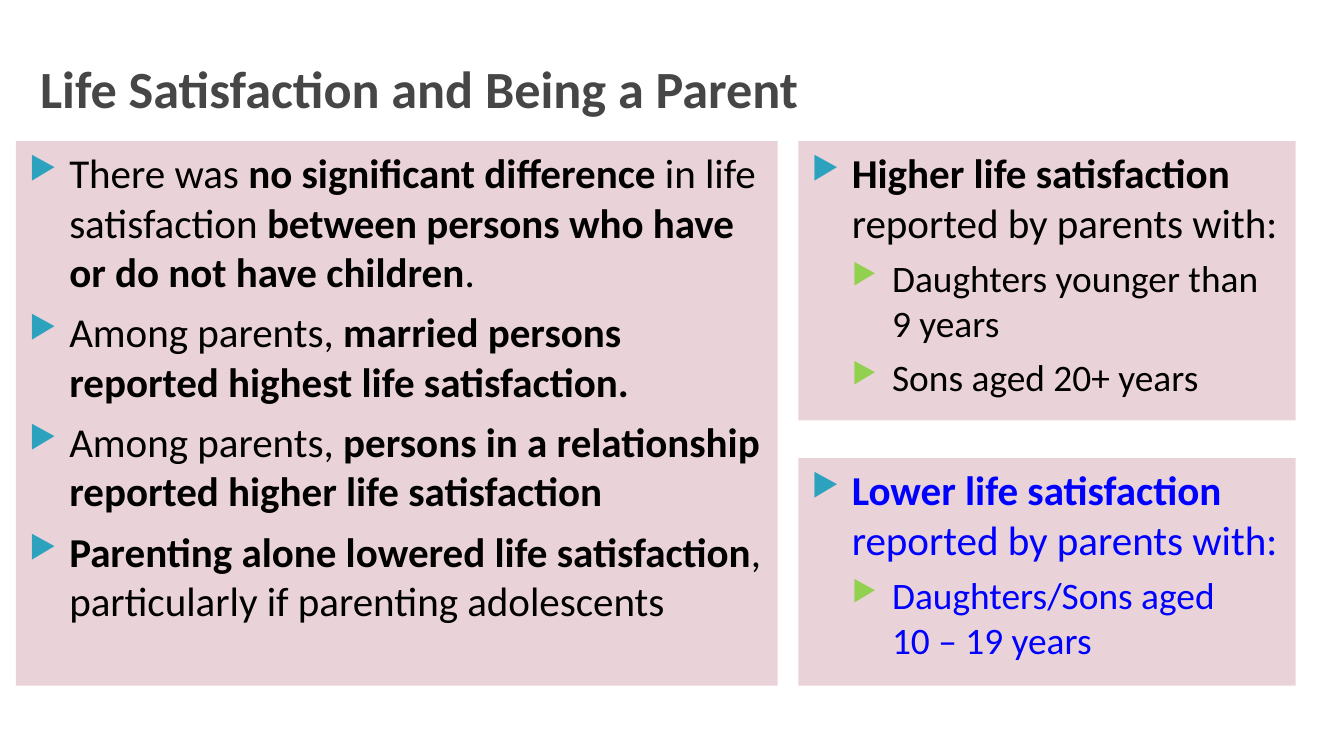
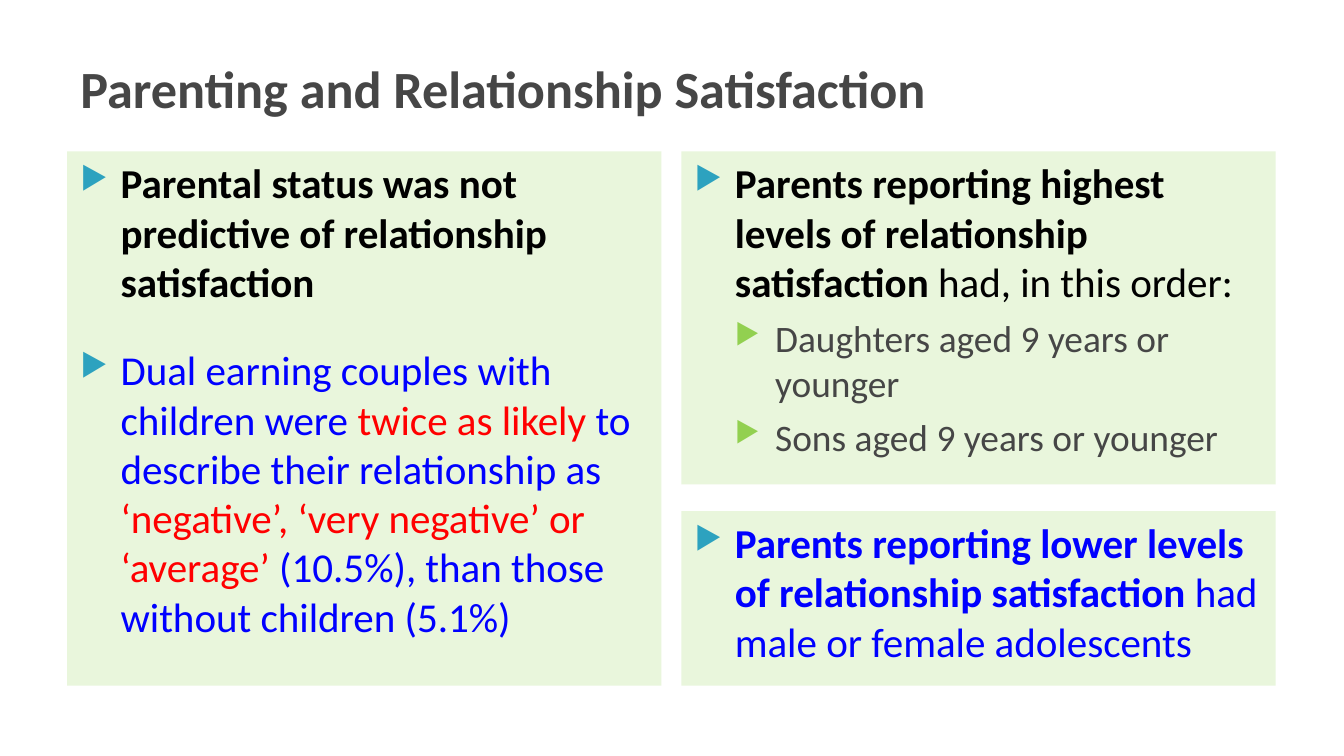
"""Build two slides on parenting, life satisfaction and relationship satisfaction."""
from dataclasses import dataclass

from lxml.etree import SubElement
from pptx import Presentation
from pptx.dml.color import RGBColor
from pptx.enum.shapes import MSO_SHAPE
from pptx.enum.text import MSO_ANCHOR, PP_ALIGN
from pptx.oxml.ns import qn
from pptx.util import Cm, Pt


@dataclass(frozen=True)
class Theme:
    font: str = "Calibri"
    grey: str = "464646"
    black: str = "000000"
    blue: str = "0000FF"
    red: str = "FF0000"
    pink: str = "EAD3D8"
    green: str = "E9F6DC"
    bullets: tuple = ("2DA2BF", "92D050")
    bullet_pct: int = 76
    title: float = 28
    body: tuple = (22, 20)
    before: tuple = (6, 5)
    wide_before: float = 21
    indent: float = 0.76


T = Theme()


def add_run(p, text, size, color, bold=False):
    r = p.add_run()
    r.text = text
    r.font.name = T.font
    r.font.size = Pt(size)
    r.font.bold = bold
    r.font.color.rgb = RGBColor.from_string(color)


def set_bullet(p, level):
    pPr = p._p.get_or_add_pPr()
    pPr.set("marL", str(Cm(T.indent * (level + 1))))
    pPr.set("indent", str(-Cm(T.indent)))
    clr = SubElement(pPr, qn("a:buClr"))
    SubElement(clr, qn("a:srgbClr"), val=T.bullets[level])
    SubElement(pPr, qn("a:buSzPct"), val=str(T.bullet_pct * 1000))
    SubElement(pPr, qn("a:buChar"), char="▶")


# fmt: off
slides = [
    {"title": "Life Satisfaction and Being a Parent", "title_at": (0.51, 23.62), "fill": T.pink, "panels": [
        ((0.3, 2.67, 14.4, 10.29), [
            (0, T.black, [("There was ", False), ("no significant difference ", True),
                          ("in life satisfaction ", False),
                          ("between persons who have or do not have children", True), (".", False)]),
            (0, T.black, [("Among parents, ", False),
                          ("married persons reported highest life satisfaction.", True)]),
            (0, T.black, [("Among parents, ", False),
                          ("persons in a relationship reported higher life satisfaction", True)]),
            (0, T.black, [("Parenting alone lowered life satisfaction", True),
                          (", particularly if parenting adolescents", False)])]),
        ((15.09, 2.67, 9.4, 5.28), [
            (0, T.black, [("Higher life satisfaction ", True), ("reported by parents with:", False)]),
            (1, T.black, [("Daughters younger than\n9 years", False)]),
            (1, T.black, [("Sons aged 20+ years", False)])]),
        ((15.09, 8.66, 9.4, 4.3), [
            (0, T.blue, [("Lower life satisfaction ", True), ("reported by parents with:", False)]),
            (1, T.blue, [("Daughters/Sons aged\n10 – 19 years", False)])]),
    ]},
    {"title": "Parenting and Relationship Satisfaction", "title_at": (1.27, 22.86), "fill": T.green, "panels": [
        ((1.27, 2.86, 11.23, 10.1), [
            (0, T.black, [("Parental status was not predictive of relationship satisfaction", True)]),
            (0, T.blue, [("Dual earning couples with children were ", False),
                         ("twice as likely ", False, T.red),
                         ("to describe their relationship as ", False),
                         ("‘negative’, ‘very negative’ or ‘average’ ", False, T.red),
                         ("(10.5%), than those without children (5.1%)", False)], T.wide_before)]),
        ((12.88, 2.86, 11.23, 6.3), [
            (0, T.black, [("Parents reporting highest levels of relationship satisfaction ", True),
                          ("had, in this order:", False)]),
            (1, T.grey, [("Daughters aged 9 years or younger", False)]),
            (1, T.grey, [("Sons aged 9 years or younger", False)])]),
        ((12.88, 9.66, 11.23, 3.3), [
            (0, T.blue, [("Parents reporting lower levels of relationship satisfaction ", True),
                         ("had male or female adolescents", False)])]),
    ]},
]
# fmt: on

prs = Presentation()
prs.slide_width, prs.slide_height = Cm(25.4), Cm(14.29)

for page in slides:
    s = prs.slides.add_slide(prs.slide_layouts[6])
    left, width = page["title_at"]
    tf = s.shapes.add_textbox(Cm(left), Cm(0.48), Cm(width), Cm(1.9)).text_frame
    tf.word_wrap = True
    tf.vertical_anchor = MSO_ANCHOR.BOTTOM
    add_run(tf.paragraphs[0], page["title"], T.title, T.grey, True)

    for box, items in page["panels"]:
        sp = s.shapes.add_shape(MSO_SHAPE.RECTANGLE, *[Cm(v) for v in box])
        sp.shadow.inherit = False
        sp.fill.solid()
        sp.fill.fore_color.rgb = RGBColor.from_string(page["fill"])
        sp.line.fill.background()
        tf = sp.text_frame
        tf.word_wrap = True
        tf.vertical_anchor = MSO_ANCHOR.TOP
        for i, (level, color, runs, *before) in enumerate(items):
            p = tf.add_paragraph() if i else tf.paragraphs[0]
            p.level = level
            p.alignment = PP_ALIGN.LEFT
            p.space_before = Pt(before[0] if before else T.before[level])
            set_bullet(p, level)
            for text, bold, *tint in runs:
                for n, line in enumerate(text.split("\n")):
                    if n:
                        p.add_line_break()
                    add_run(p, line, T.body[level], tint[0] if tint else color, bold)

prs.save("out.pptx")
